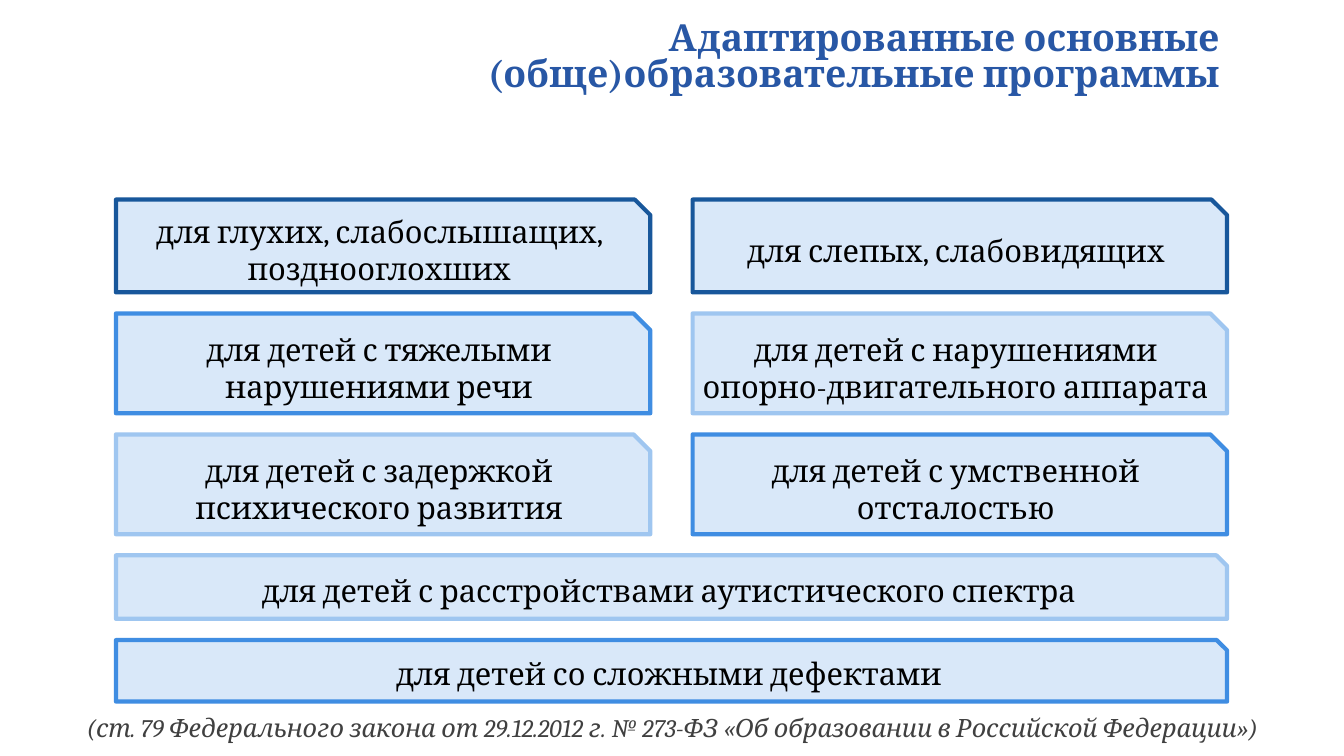
"""Build a slide listing adapted basic educational programmes."""
from dataclasses import dataclass
from itertools import accumulate

from pptx import Presentation
from pptx.dml.color import RGBColor
from pptx.enum.shapes import MSO_SHAPE
from pptx.enum.text import MSO_ANCHOR, MSO_AUTO_SIZE, PP_ALIGN
from pptx.util import Inches, Pt


@dataclass(frozen=True)
class Theme:
    """Colours, type sizes and line width of the slide."""
    font: str = "Cambria"
    title: str = "2857A5"
    text: str = "000000"
    note: str = "404040"
    fill: str = "D9E8F9"
    dark: str = "18579B"
    middle: str = "3F8DE2"
    light: str = "9FC6F0"
    title_size: float = 26.7
    card_size: float = 22
    note_size: float = 18
    outline: float = 3


@dataclass(frozen=True)
class Card:
    """One programme: its place on the grid, outline colour and wording."""
    row: int
    column: int
    span: int
    outline: str
    text: str


THEME = Theme()
LEFT, TOP = 1.15, 1.98
COLUMN_WIDTH, COLUMN_GAP, ROW_GAP = 5.3, 0.42, 0.21
ROW_HEIGHTS = (0.92, 0.99, 0.99, 0.63, 0.61)
ROW_TOPS = tuple(accumulate((height + ROW_GAP for height in ROW_HEIGHTS), initial=TOP))

CARDS = (
    Card(0, 0, 1, THEME.dark, "для глухих, слабослышащих, позднооглохших"),
    Card(0, 1, 1, THEME.dark, "для слепых, слабовидящих"),
    Card(1, 0, 1, THEME.middle, "для детей с тяжелыми нарушениями речи"),
    Card(1, 1, 1, THEME.light, "для детей с нарушениями опорно-двигательного аппарата"),
    Card(2, 0, 1, THEME.light, "для детей с задержкой психического развития"),
    Card(2, 1, 1, THEME.middle, "для детей с умственной отсталостью"),
    Card(3, 0, 2, THEME.light, "для детей с расстройствами аутистического спектра"),
    Card(4, 0, 2, THEME.middle, "для детей со сложными дефектами"),
)


def apply(target: object, values: dict) -> None:
    """Set each named attribute of the target."""
    for name, value in values.items():
        setattr(target, name, value)


def write(box, text: str, size: float, colour: str, align=PP_ALIGN.CENTER,
          anchor=MSO_ANCHOR.MIDDLE, spacing: float = 1.0, **style) -> None:
    """Put one formatted paragraph into a box."""
    frame = box.text_frame
    apply(frame, {
        "word_wrap": True, "auto_size": MSO_AUTO_SIZE.NONE, "vertical_anchor": anchor,
        "margin_left": Inches(0.08), "margin_right": Inches(0.08),
        "margin_top": Inches(0.05), "margin_bottom": Inches(0.05),
    })
    para = frame.paragraphs[0]
    apply(para, {"alignment": align, "line_spacing": spacing})
    span = para.add_run()
    span.text = text
    apply(span.font, {"name": THEME.font, "size": Pt(size), **style})
    span.font.color.rgb = RGBColor.from_string(colour)


def draw_title(page) -> None:
    """Place and fill the title placeholder."""
    box = page.shapes.title
    apply(box, {"left": Inches(3.49), "top": Inches(0.18),
                "width": Inches(8.69), "height": Inches(0.84)})
    write(box, "Адаптированные основные (обще)образовательные программы",
          THEME.title_size, THEME.title, PP_ALIGN.RIGHT, MSO_ANCHOR.TOP, 0.8, bold=True)


def draw_card(page, card: Card) -> None:
    """Draw one snipped card on the grid."""
    left = LEFT + card.column * (COLUMN_WIDTH + COLUMN_GAP)
    width = card.span * COLUMN_WIDTH + (card.span - 1) * COLUMN_GAP
    box = page.shapes.add_shape(
        MSO_SHAPE.SNIP_1_RECTANGLE, Inches(left), Inches(ROW_TOPS[card.row]),
        Inches(width), Inches(ROW_HEIGHTS[card.row]))
    box.shadow.inherit = False
    box.fill.solid()
    box.fill.fore_color.rgb = RGBColor.from_string(THEME.fill)
    box.line.color.rgb = RGBColor.from_string(card.outline)
    box.line.width = Pt(THEME.outline)
    write(box, card.text, THEME.card_size, THEME.text)


def draw_note(page) -> None:
    """Add the reference to the law below the cards."""
    box = page.shapes.add_textbox(Inches(0.22), Inches(7.05), Inches(12.9), Inches(0.34))
    write(box, "(ст. 79 Федерального закона от 29.12.2012 г. № 273-ФЗ "
               "«Об образовании в Российской Федерации»)",
          THEME.note_size, THEME.note, italic=True)


def main() -> None:
    """Build and save the deck."""
    deck = Presentation()
    apply(deck, {"slide_width": Inches(13.33), "slide_height": Inches(7.5)})
    page = deck.slides.add_slide(deck.slide_layouts[5])
    draw_title(page)
    for card in CARDS:
        draw_card(page, card)
    draw_note(page)
    deck.save("out.pptx")


if __name__ == "__main__":
    main()
